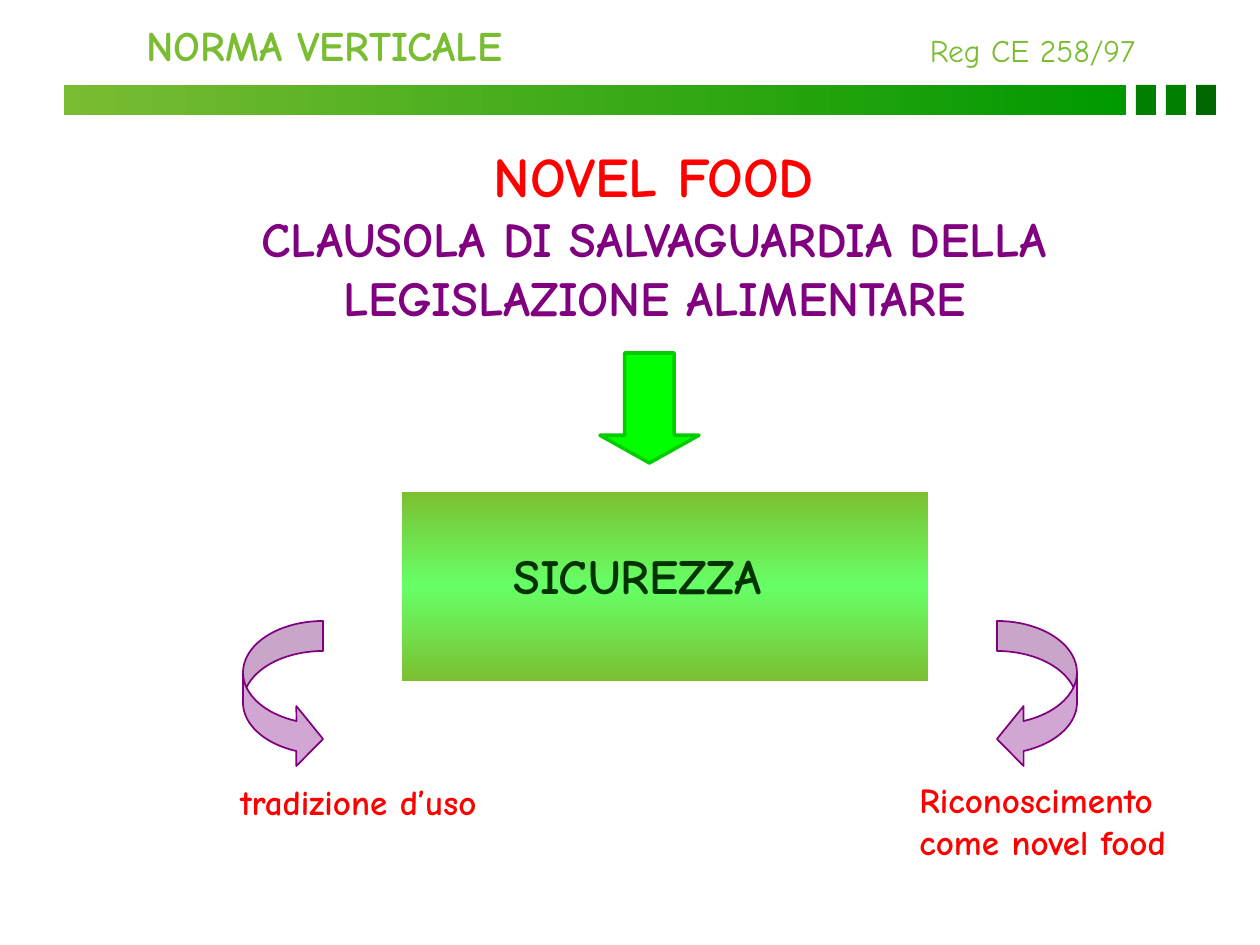
from copy import deepcopy
from dataclasses import dataclass

from lxml.etree import SubElement
from pptx import Presentation
from pptx.dml.color import RGBColor
from pptx.enum.shapes import MSO_SHAPE as Preset
from pptx.enum.text import MSO_ANCHOR as Anchor, MSO_AUTO_SIZE as AutoSize, PP_ALIGN as Align
from pptx.oxml.ns import qn
from pptx.util import Emu, Pt

PX = 914400 / 126


@dataclass(frozen=True)
class Theme:
    font: str = "Comic Neue"
    leaf: str = "7ABC32"
    green: str = "009900"
    square: str = "008000"
    last_square: str = "006600"
    panel_edge: str = "7CC032"
    panel_middle: str = "66FF66"
    panel_text: str = "003300"
    arrow: str = "00FF00"
    arrow_line: str = "00CC00"
    red: str = "FF0000"
    purple: str = "800080"
    heading: int = 32
    large: int = 28
    title: int = 24
    label: int = 20
    reference: int = 18


THEME = Theme()


def px(*lengths):
    return [Emu(round(length * PX)) for length in lengths]


def rgb(value):
    return RGBColor.from_string(value)


def write(shape, lines, align=Align.LEFT, wrap=False):
    """Fill a text shape with lines of (text, size, colour, bold)."""
    frame = shape.text_frame
    settings = {"word_wrap": wrap, "auto_size": AutoSize.NONE, "vertical_anchor": Anchor.TOP}
    for name, value in settings.items():
        setattr(frame, name, value)
    for index, (text, size, color, bold) in enumerate(lines):
        paragraph = frame.add_paragraph() if index else frame.paragraphs[0]
        paragraph.alignment = align
        run = paragraph.add_run()
        run.text = text
        for name, value in {"name": THEME.font, "size": Pt(size), "bold": bold}.items():
            setattr(run.font, name, value)
        run.font.color.rgb = rgb(color)


def add_text(slide, box, lines, **layout):
    write(slide.shapes.add_textbox(*px(*box)), lines, **layout)


def add_block(slide, preset, box, color=None, line=None, width=1):
    shape = slide.shapes.add_shape(preset, *px(*box))
    shape.shadow.inherit = False
    if color:
        shape.fill.solid()
        shape.fill.fore_color.rgb = rgb(color)
    if line:
        shape.line.color.rgb = rgb(line)
        shape.line.width = Pt(width)
    else:
        shape.line.fill.background()
    return shape


def set_gradient(shape, colors, angle):
    """Spread the colours evenly along the gradient."""
    shape.fill.gradient()
    shape.fill.gradient_angle = angle
    stop_list = shape._element.spPr.find(".//" + qn("a:gsLst"))
    while len(stop_list) < len(colors):
        stop_list.append(deepcopy(stop_list[-1]))
    for index, (stop, color) in enumerate(zip(shape.fill.gradient_stops, colors)):
        stop.color.rgb = rgb(color)
        stop.position = index / (len(colors) - 1)


def add_header(slide, left, top):
    title = slide.shapes.title
    box = px(left + 70, top, 446, 63)
    for name, value in zip(("left", "top", "width", "height"), box):
        setattr(title, name, value)
    write(title, [("NORMA VERTICALE", THEME.title, THEME.leaf, True)])
    add_text(slide, (left + 843, top + 12, 251, 50),
             [("Reg CE 258/97", THEME.reference, THEME.leaf, False)], align=Align.CENTER)

    bar_top, bar_height = top + 72, 30
    bar = add_block(slide, Preset.RECTANGLE, (left, bar_top, 1062, bar_height))
    set_gradient(bar, (THEME.leaf, THEME.green), 0)
    for index, color in enumerate((THEME.square, THEME.square, THEME.last_square)):
        add_block(slide, Preset.RECTANGLE,
                  (left + 1072 + index * 30, bar_top, 20, bar_height), color)


def add_clause(slide, left, top, width):
    add_text(slide, (left, top, width, 256), [
        ("NOVEL FOOD", THEME.heading, THEME.red, True),
        ("CLAUSOLA DI SALVAGUARDIA DELLA LEGISLAZIONE ALIMENTARE",
         THEME.large, THEME.purple, True),
    ], align=Align.CENTER, wrap=True)
    arrow = add_block(slide, Preset.DOWN_ARROW, (left + 477, top + 218, 99, 110),
                      THEME.arrow, THEME.arrow_line, 2)
    arrow.adjustments[1] = 0.28


def add_safety_panel(slide, left, top, width, height):
    panel = add_block(slide, Preset.RECTANGLE, (left, top, width, height))
    set_gradient(panel, (THEME.panel_edge, THEME.panel_middle, THEME.panel_edge), 90)
    add_text(slide, (left + 99, top + 47, 318, 72),
             [("SICUREZZA", THEME.large, THEME.panel_text, True)])


def add_curved_arrow(slide, left, top, mirrored=False):
    arrow = add_block(slide, Preset.CURVED_RIGHT_ARROW, (left, top, 80, 148),
                      THEME.purple, THEME.purple)
    for index, value in enumerate((0.375, 0.75, 0.333)):
        arrow.adjustments[index] = value
    properties = arrow._element.spPr
    color = properties.find(qn("a:solidFill")).find(qn("a:srgbClr"))
    SubElement(color, qn("a:alpha")).set("val", "35000")
    if mirrored:
        properties.find(qn("a:xfrm")).set("flipH", "1")


def add_outcomes(slide, left, top):
    add_curved_arrow(slide, left + 30, top)
    add_curved_arrow(slide, left + 784, top, mirrored=True)
    tradition = ["tradizione d’uso"]
    recognition = ["Riconoscimento", "come novel food"]
    for box, texts, align in (
        ((left, top + 153, 291, 54), tradition, Align.CENTER),
        ((left + 694, top + 151, 296, 97), recognition, Align.LEFT),
    ):
        add_text(slide, box, [(text, THEME.label, THEME.red, True) for text in texts],
                 align=align)


def main():
    presentation = Presentation()
    presentation.slide_width, presentation.slide_height = px(1260, 945)
    slide = presentation.slides.add_slide(presentation.slide_layouts[5])
    add_safety_panel(slide, 402, 492, 526, 189)
    add_clause(slide, 123, 135, 1062)
    add_header(slide, 64, 13)
    add_outcomes(slide, 213, 621)
    presentation.save("out.pptx")


if __name__ == "__main__":
    main()
